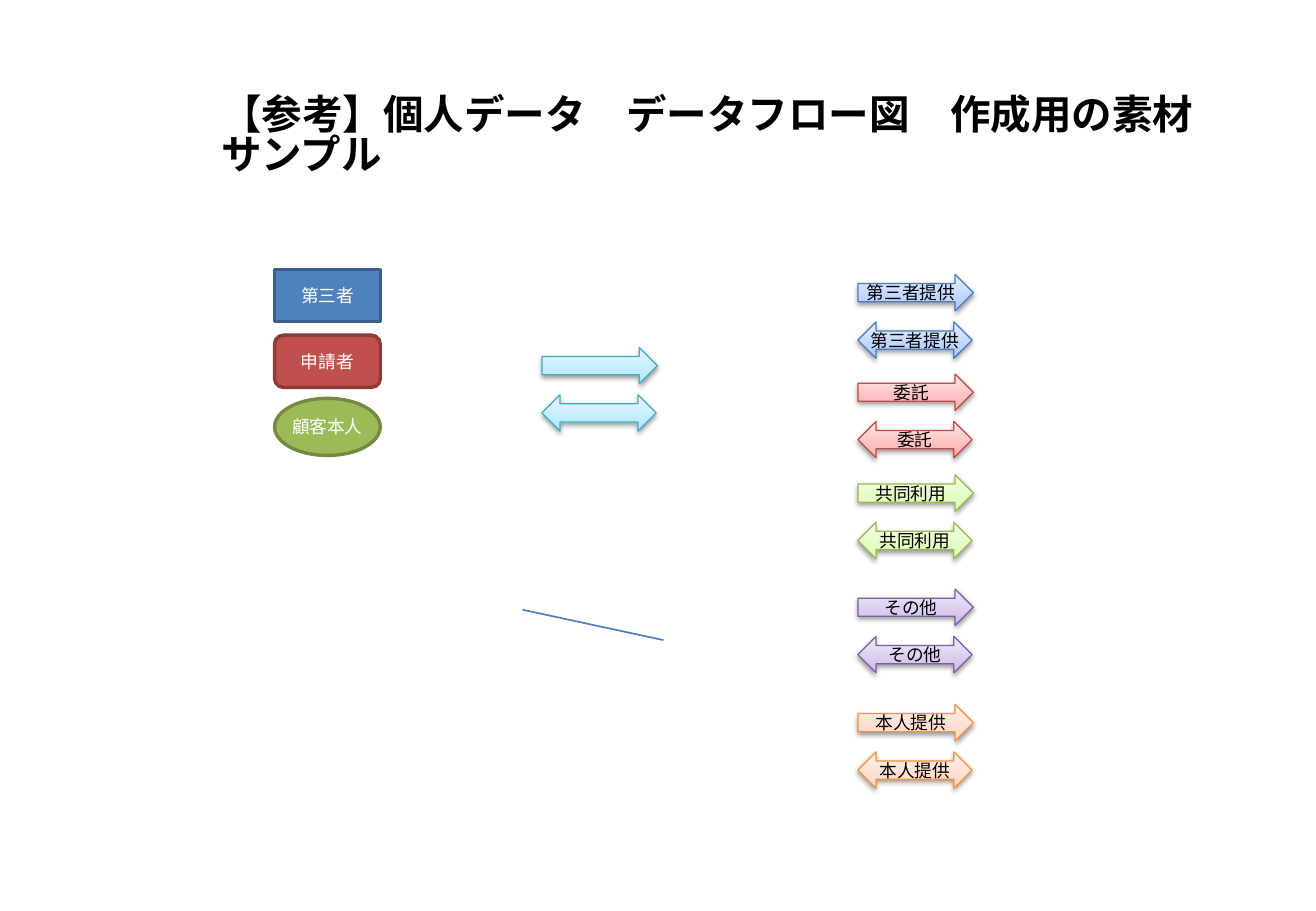
from dataclasses import dataclass

from lxml.etree import SubElement
from pptx import Presentation
from pptx.dml.color import RGBColor
from pptx.enum.shapes import MSO_CONNECTOR as Connector, MSO_SHAPE as Shape
from pptx.enum.text import MSO_ANCHOR as Anchor, MSO_AUTO_SIZE as AutoSize, PP_ALIGN as Align
from pptx.oxml.ns import qn
from pptx.util import Inches, Pt


@dataclass(frozen=True)
class Theme:
    """Colours, font and sizes of the slide."""
    font: str = "Noto Sans CJK JP"
    title_size: float = 24
    label_size: float = 10.5
    black: str = "000000"
    white: str = "FFFFFF"
    rule: str = "4B7EBC"
    blue: tuple = ("4B7EBC", "A4C4FF", "BFD4FF", "E6EEFF")
    red: tuple = ("BF4C48", "FFA6A5", "FFC0BF", "FFE7E7")
    green: tuple = ("98B955", "DAFDA7", "E4FCC2", "F5FFE7")
    purple: tuple = ("7D60A0", "C9B5E8", "D8CBEE", "F0EAF9")
    orange: tuple = ("F69240", "FFD2BD", "FFDED0", "FFF2ED")
    aqua: tuple = ("46AAC5", "A7E6FF", "C1EDFF", "E7F8FF")
    third_party: tuple = ("4F81BD", "3A5F8C")
    applicant: tuple = ("C0504D", "8E3B39")
    customer: tuple = ("9BBB59", "738A42")


THEME = Theme()


def add_run(paragraph, words, size, color, bold=False):
    """Add a run in the slide's font."""
    run = paragraph.add_run()
    run.text = words
    run.font.name = THEME.font
    run.font.size = Pt(size)
    run.font.bold = bold
    run.font.color.rgb = RGBColor.from_string(color)
    SubElement(run.font._element, qn("a:ea"), typeface=THEME.font)


def add_figure(slide, preset, box, outline, weight, words, color):
    """Add an outlined preset shape with a centred label."""
    figure = slide.shapes.add_shape(preset, *map(Inches, box))
    figure.shadow.inherit = False
    figure.line.color.rgb = RGBColor.from_string(outline)
    figure.line.width = Pt(weight)
    if words:
        frame = figure.text_frame
        frame.word_wrap = False
        frame.vertical_anchor = Anchor.MIDDLE
        frame.paragraphs[0].alignment = Align.CENTER
        add_run(frame.paragraphs[0], words, THEME.label_size, color)
    return figure


def apply_gradient(figure, tints):
    """Fill a shape with three tints rising from its bottom edge."""
    figure.fill.gradient()
    figure.fill.gradient_angle = 90
    stops = figure._element.spPr.find(".//" + qn("a:gsLst"))
    for stop in list(stops):
        stops.remove(stop)
    for position, tint in zip((0, 35000, 100000), tints):
        stop = SubElement(stops, qn("a:gs"), pos=str(position))
        SubElement(stop, qn("a:srgbClr"), val=tint)


def apply_shadow(figure):
    """Give a shape a soft shadow straight below it."""
    effects = figure._element.spPr.find(qn("a:effectLst"))
    shadow = SubElement(effects, qn("a:outerShdw"), blurRad=str(Pt(3.1)),
                        dist=str(Pt(1.6)), dir="5400000", rotWithShape="0")
    black = SubElement(shadow, qn("a:srgbClr"), val=THEME.black)
    SubElement(black, qn("a:alpha"), val="38000")


def add_title(slide, box, words):
    """Place the title in its placeholder."""
    title = slide.shapes.title
    title.left, title.top, title.width, title.height = map(Inches, box)
    frame = title.text_frame
    frame.word_wrap = True
    frame.auto_size = AutoSize.SHAPE_TO_FIT_TEXT
    frame.vertical_anchor = Anchor.MIDDLE
    heading = frame.paragraphs[0]
    heading.alignment = Align.LEFT
    heading.line_spacing = 0.82
    add_run(heading, words, THEME.title_size, THEME.black, bold=True)


def add_parties(slide, left, top, width):
    """Stack the three kinds of party from a top left corner."""
    parties = (
        (Shape.RECTANGLE, 0, 0.43, "第三者", THEME.third_party),
        (Shape.ROUNDED_RECTANGLE, 0.54, 0.43, "申請者", THEME.applicant),
        (Shape.OVAL, 1.06, 0.47, "顧客本人", THEME.customer),
    )
    for preset, offset, height, words, (fill, outline) in parties:
        party = add_figure(slide, preset, (left, top + offset, width, height),
                           outline, 2, words, THEME.white)
        party.fill.solid()
        party.fill.fore_color.rgb = RGBColor.from_string(fill)


def add_flow_pair(slide, left, top, words, palette):
    """Add a one-way arrow with a two-way arrow below it."""
    outline, *tints = palette
    for row, (preset, width) in enumerate(((Shape.RIGHT_ARROW, 0.95),
                                           (Shape.LEFT_RIGHT_ARROW, 0.94))):
        arrow = add_figure(slide, preset, (left, top + row * 0.39, width, 0.3),
                           outline, 0.75, words, THEME.black)
        apply_gradient(arrow, tints)
        apply_shadow(arrow)


def add_flows(slide, left, top):
    """Stack the labelled arrow pairs from a top left corner."""
    flows = (
        (0, "第三者提供", THEME.blue),
        (0.82, "委託", THEME.red),
        (1.65, "共同利用", THEME.green),
        (2.59, "その他", THEME.purple),
        (3.54, "本人提供", THEME.orange),
    )
    for offset, words, palette in flows:
        add_flow_pair(slide, left, top + offset, words, palette)


def add_rule(slide, left, top, width, height):
    """Draw the plain line across a box."""
    rule = slide.shapes.add_connector(
        Connector.STRAIGHT, *map(Inches, (left, top, left + width, top + height)))
    rule.line.color.rgb = RGBColor.from_string(THEME.rule)
    rule.line.width = Pt(1)
    SubElement(rule._element.spPr, qn("a:effectLst"))


def main():
    """Build the slide and save it."""
    deck = Presentation()
    deck.slide_width, deck.slide_height = Inches(10.83), Inches(7.5)
    slide = deck.slides.add_slide(deck.slide_layouts[5])
    add_title(slide, (1.72, 0.68, 8.5, 0.91),
              "【参考】個人データ　データフロー図　作成用の素材サンプル")
    add_parties(slide, 2.26, 2.22, 0.87)
    add_rule(slide, 4.3, 5.02, 1.16, 0.25)
    add_flow_pair(slide, 4.46, 2.86, "", THEME.aqua)
    add_flows(slide, 7.06, 2.26)
    deck.save("out.pptx")


if __name__ == "__main__":
    main()
